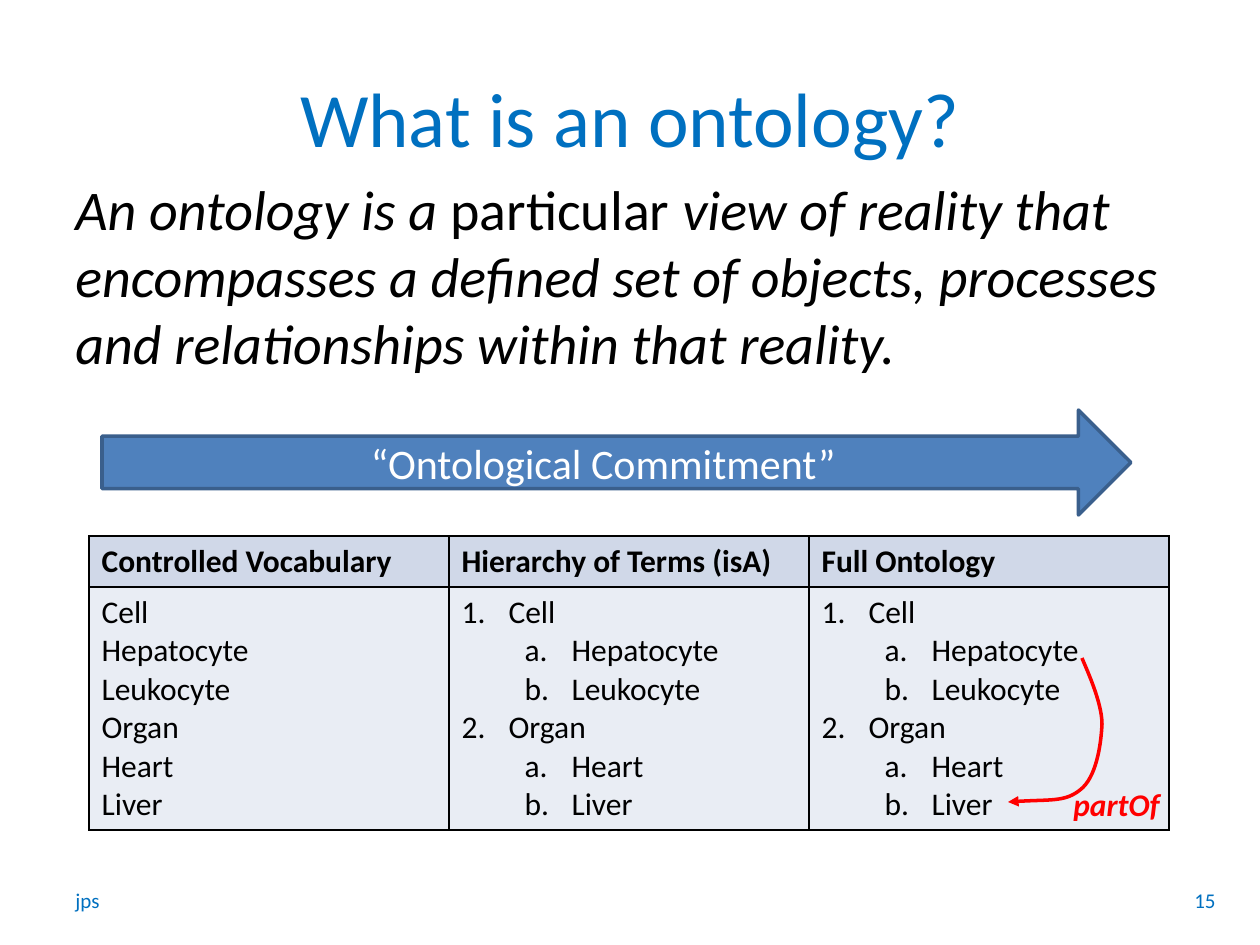
import pptx
import pptx.dml.color
import pptx.enum.shapes
import pptx.enum.text
import pptx.oxml
import pptx.oxml.ns
import pptx.util
from lxml import etree

SCALE = 914400 / 126
FONT = "Calibri"
BLUE = "0070C0"
BLACK = "000000"
RED = "FF0000"
ALIGN = pptx.enum.text.PP_ALIGN
ANCHOR = pptx.enum.text.MSO_ANCHOR

TERMS = {"Cell": ["Hepatocyte", "Leukocyte"], "Organ": ["Heart", "Liver"]}
HEADINGS = ["Controlled Vocabulary", "Hierarchy of Terms (isA)", "Full Ontology"]
PART_OF_CURVE = [
    (1008, 802),
    (1048, 799), (1065, 802), (1080, 790),
    (1096, 778), (1101, 746), (1102, 724),
    (1102, 702), (1086, 668), (1082, 658),
]


def px(length):
    return pptx.util.Emu(round(length * SCALE))


def color(value):
    return pptx.dml.color.RGBColor.from_string(value)


def qn(tag):
    return pptx.oxml.ns.qn(tag)


def paint(shape, fill):
    shape.fill.solid()
    shape.fill.fore_color.rgb = color(fill)


def outline(shape, line):
    shape.line.color.rgb = color(line)
    shape.line.width = pptx.util.Pt(2)
    shape.shadow.inherit = False


def style(para, size, ink, bold=False, italic=None, align=ALIGN.LEFT):
    para.alignment = align
    para.font.name = FONT
    para.font.size = pptx.util.Pt(size)
    para.font.color.rgb = color(ink)
    para.font.bold = bold
    para.font.italic = italic


def add_text(page, place, text, size, ink, anchor=ANCHOR.TOP, wrap=True, **look):
    box = page.shapes.add_textbox(*map(px, place))
    frame = box.text_frame
    frame.word_wrap = wrap
    frame.vertical_anchor = anchor
    para = frame.paragraphs[0]
    para.text = text
    style(para, size, ink, **look)
    return para


def add_definition(page):
    para = add_text(page, (63, 168, 1134, 262), "", 32, BLACK)
    for text, italic in [
        ("An ontology is a ", True),
        ("particular", False),
        (" view of reality that encompasses a defined set of objects, "
         "processes and relationships within that reality.", True),
    ]:
        span = para.add_run()
        span.text = text
        span.font.italic = italic


def add_commitment_arrow(page):
    arrow = page.shapes.add_shape(
        pptx.enum.shapes.MSO_SHAPE.RIGHT_ARROW, *map(px, (102, 410, 1029, 105)))
    paint(arrow, "4F81BD")
    outline(arrow, "3A5F8C")
    arrow.text_frame.vertical_anchor = ANCHOR.MIDDLE
    para = arrow.text_frame.paragraphs[0]
    para.text = "“Ontological Commitment”"
    style(para, 24, "FFFFFF", align=ALIGN.CENTER)


def number(para, level):
    para.level = level
    properties = para._p.get_or_add_pPr()
    properties.set("marL", str(px(47 + 63 * level)))
    properties.set("indent", str(px(-47)))
    scheme = ["arabicPeriod", "alphaLcPeriod"][level]
    etree.SubElement(properties, qn("a:buAutoNum"), type=scheme)


def add_borders(cell):
    properties = cell._tc.get_or_add_tcPr()
    for side in "LRTB":
        properties.append(pptx.oxml.parse_xml(
            f'<a:ln{side} {pptx.oxml.ns.nsdecls("a")} w="12700"><a:solidFill>'
            f'<a:srgbClr val="{BLACK}"/></a:solidFill></a:ln{side}>'))


def fill_cell(cell, entries, fill, bold=False, numbered=False):
    add_borders(cell)
    paint(cell, fill)
    frame = cell.text_frame
    for index, (text, level) in enumerate(entries):
        para = frame.add_paragraph() if index else frame.paragraphs[0]
        para.text = text
        if numbered:
            number(para, level)
        style(para, 18, BLACK, bold=bold)


def add_comparison_table(page):
    entries = []
    for parent, children in TERMS.items():
        entries.append((parent, 0))
        entries.extend((child, 1) for child in children)
    table = page.shapes.add_table(2, 3, *map(px, (89, 536, 1080, 294))).table
    for row, height in zip(table.rows, (51, 243)):
        row.height = px(height)
    for column, heading in enumerate(HEADINGS):
        table.columns[column].width = px(360)
        fill_cell(table.cell(0, column), [(heading, 0)], "D0D8E8", bold=True)
        fill_cell(table.cell(1, column), entries, "E9EDF4", numbered=column > 0)


def add_curved_arrow(page, points):
    builder = page.shapes.build_freeform(*points[0], scale=SCALE)
    builder.add_line_segments(points[1:], close=False)
    curve = builder.convert_to_shape()
    segments = list(curve._element.iter(qn("a:lnTo")))
    for start in range(0, len(segments), 3):
        bezier = etree.Element(qn("a:cubicBezTo"))
        segments[start].addprevious(bezier)
        for segment in segments[start:start + 3]:
            bezier.append(segment[0])
            segment.getparent().remove(segment)
    curve.fill.background()
    outline(curve, RED)
    etree.SubElement(curve.line._get_or_add_ln(), qn("a:headEnd"), type="triangle")


def main():
    deck = pptx.Presentation()
    deck.slide_width, deck.slide_height = px(1260), px(945)
    page = deck.slides.add_slide(deck.slide_layouts[6])
    add_text(page, (63, 881, 50, 38), "jps", 12, BLUE, wrap=False)
    add_text(page, (63, 38, 1134, 158), "What is an ontology?", 44, BLUE,
             anchor=ANCHOR.MIDDLE, align=ALIGN.CENTER)
    add_definition(page)
    add_text(page, (1155, 876, 73, 48), "15", 12, BLUE,
             anchor=ANCHOR.MIDDLE, align=ALIGN.RIGHT)
    add_comparison_table(page)
    add_commitment_arrow(page)
    add_curved_arrow(page, PART_OF_CURVE)
    add_text(page, (1061, 779, 112, 50), "partOf", 18, RED,
             wrap=False, bold=True, italic=True)
    deck.save("out.pptx")


if __name__ == "__main__":
    main()
